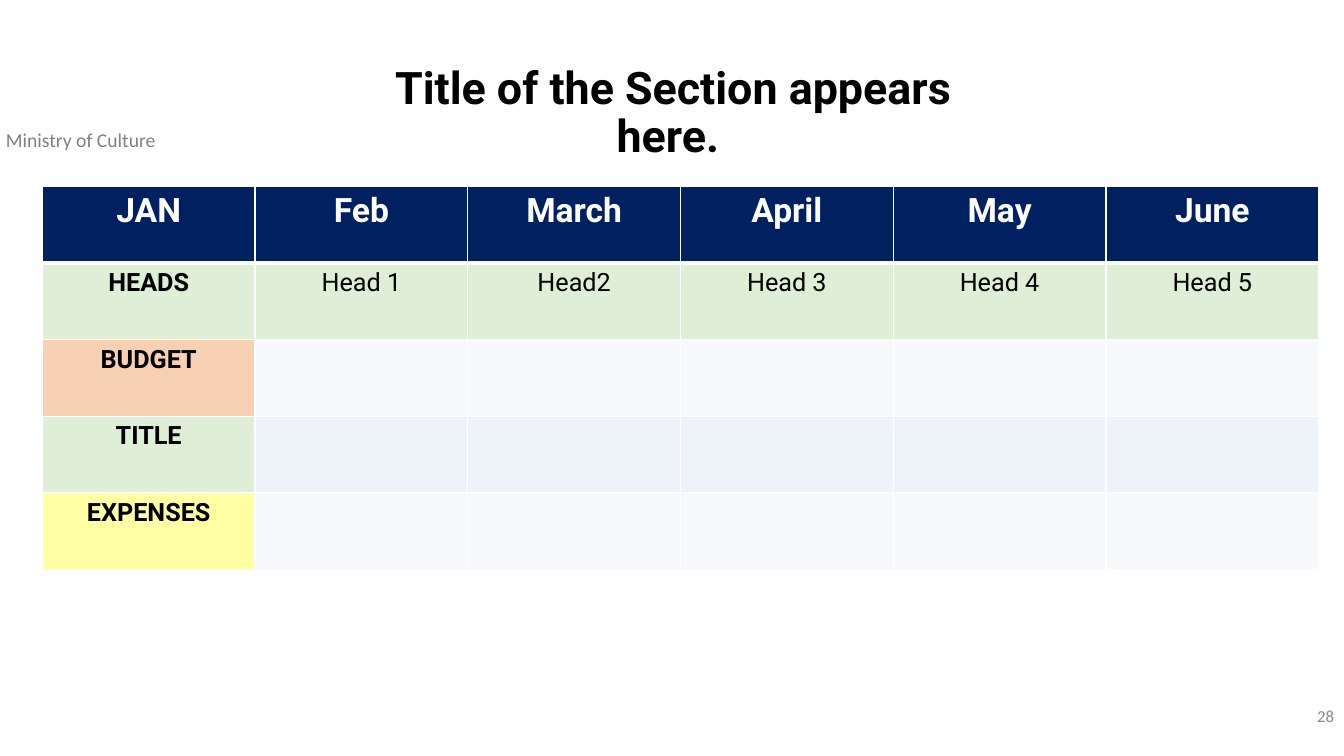
from lxml import etree
from pptx import Presentation
from pptx import util as u
from pptx.dml.color import RGBColor
from pptx.enum import text
from pptx.oxml import ns

PX = 9144  # EMU in one px, 100 px to the inch

WHITE = RGBColor(0xFF, 0xFF, 0xFF)
BLACK = RGBColor(0, 0, 0)
GRAY = RGBColor(0x80, 0x80, 0x80)
PAGE_GRAY = RGBColor(0x8C, 0x8C, 0x8C)
NAVY = RGBColor(0x00, 0x20, 0x60)
GREEN = RGBColor(0xA9, 0xD1, 0x8E)
ORANGE = RGBColor(0xED, 0x7D, 0x31)
YELLOW = RGBColor(0xFF, 0xFF, 0x00)
PALE_BLUE = RGBColor(0xEA, 0xEF, 0xF7)
SOFT_BLUE = RGBColor(0xD2, 0xDE, 0xEF)

LEFT, CENTER, RIGHT = text.PP_ALIGN.LEFT, text.PP_ALIGN.CENTER, text.PP_ALIGN.RIGHT
TOP, MIDDLE = text.MSO_ANCHOR.TOP, text.MSO_ANCHOR.MIDDLE


class Board:
    body_font = "Calibri"
    strong_font = "Roboto"
    tint = 36  # opacity of the body cells, percent

    def __init__(self, slide):
        self.slide = slide

    def set_words(self, frame, words, size, color, font, bold=False, align=LEFT):
        paragraph = frame.paragraphs[0]
        paragraph.text = words
        paragraph.alignment = align
        for run in paragraph.runs:
            run.font.size = u.Pt(size)
            run.font.name = font
            run.font.bold = bold
            run.font.color.rgb = color
        return paragraph

    def label(self, box, words, size, color, font=body_font, bold=False,
              align=LEFT, anchor=TOP):
        frame = self.slide.shapes.add_textbox(*(n * PX for n in box)).text_frame
        frame.word_wrap = True
        frame.vertical_anchor = anchor
        return self.set_words(frame, words, size, color, font, bold, align)

    def table(self, left, top, column, row, row_count, column_count):
        grid = self.slide.shapes.add_table(
            row_count, column_count, left * PX, top * PX,
            column * column_count * PX, row * row_count * PX).table
        grid.first_row = grid.horz_banding = False
        for part in grid.columns:
            part.width = column * PX
        for part in grid.rows:
            part.height = row * PX
        return grid

    def cell(self, cell, words, fill, size=18, color=BLACK, bold=False,
             opacity=tint, top_line=1, bottom_line=1):
        self.set_words(cell.text_frame, words, size, color, self.strong_font, bold, CENTER)
        cell.fill.solid()
        cell.fill.fore_color.rgb = fill
        properties = cell._tc.tcPr
        if opacity < 100:
            shade = properties.find(".//" + ns.qn("a:srgbClr"))
            etree.SubElement(shade, ns.qn("a:alpha"), val=str(opacity * 1000))
        # Borders come before the fill
        widths = {"L": 1, "R": 1, "T": top_line, "B": bottom_line}
        for place, (side, width) in enumerate(widths.items()):
            line = etree.Element(ns.qn("a:ln" + side), w=str(u.Pt(width)))
            solid = etree.SubElement(line, ns.qn("a:solidFill"))
            etree.SubElement(solid, ns.qn("a:srgbClr"), val=str(WHITE))
            properties.insert(place, line)


def main():
    deck = Presentation()
    deck.slide_width, deck.slide_height = 1333 * PX, 750 * PX
    board = Board(deck.slides.add_slide(deck.slide_layouts[6]))

    # Ministry name
    board.label((-4, 122, 290, 34), "Ministry of Culture", 14, GRAY)

    # Budget calendar
    months = ["JAN", "Feb", "March", "April", "May", "June"]
    heads = ["Head 1", "Head2", "Head 3", "Head 4", "Head 5"]
    empty = [""] * len(heads)
    lines = [
        ("HEADS", GREEN, heads, GREEN),
        ("BUDGET", ORANGE, empty, PALE_BLUE),
        ("TITLE", GREEN, empty, SOFT_BLUE),
        ("EXPENSES", YELLOW, empty, PALE_BLUE),
    ]
    calendar = board.table(42, 185, 211, 76, len(lines) + 1, len(months))
    for column, month in enumerate(months):
        board.cell(calendar.cell(0, column), month, NAVY, 24, WHITE, True,
                   opacity=100, bottom_line=3)
    for row, (name, name_fill, entries, entry_fill) in enumerate(lines, 1):
        top_line = 3 if row == 1 else 1
        board.cell(calendar.cell(row, 0), name, name_fill, bold=True, top_line=top_line)
        for column, entry in enumerate(entries, 1):
            board.cell(calendar.cell(row, column), entry, entry_fill, top_line=top_line)

    # Page number
    board.label((1033, 690, 300, 40), "28", 12, PAGE_GRAY, align=RIGHT, anchor=MIDDLE)

    # Section title
    title = board.label((328, 60, 680, 107), "Title of the Section appears here. ",
                        32, BLACK, board.strong_font, True, CENTER)
    title.line_spacing = 0.9

    deck.save("out.pptx")


if __name__ == "__main__":
    main()
